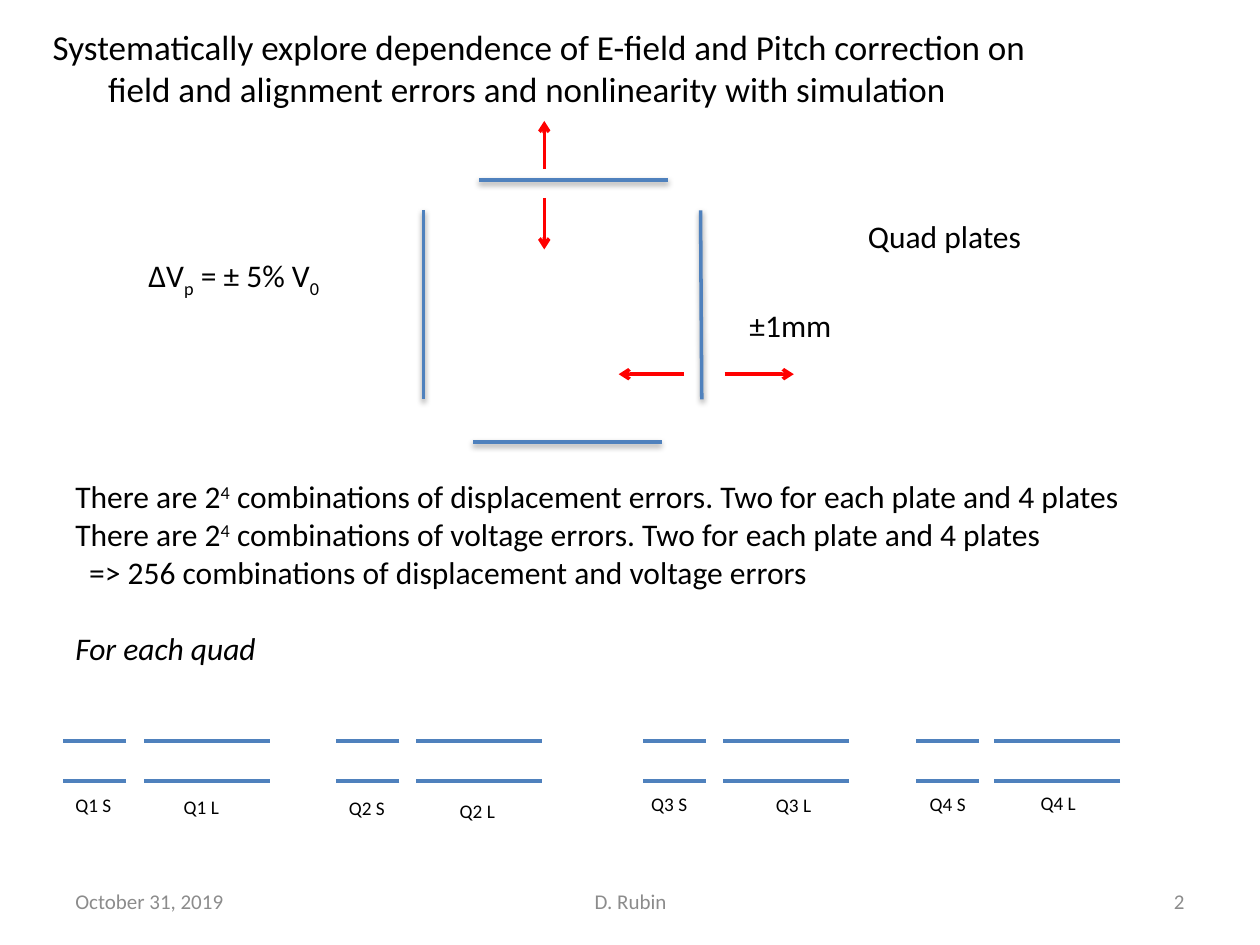
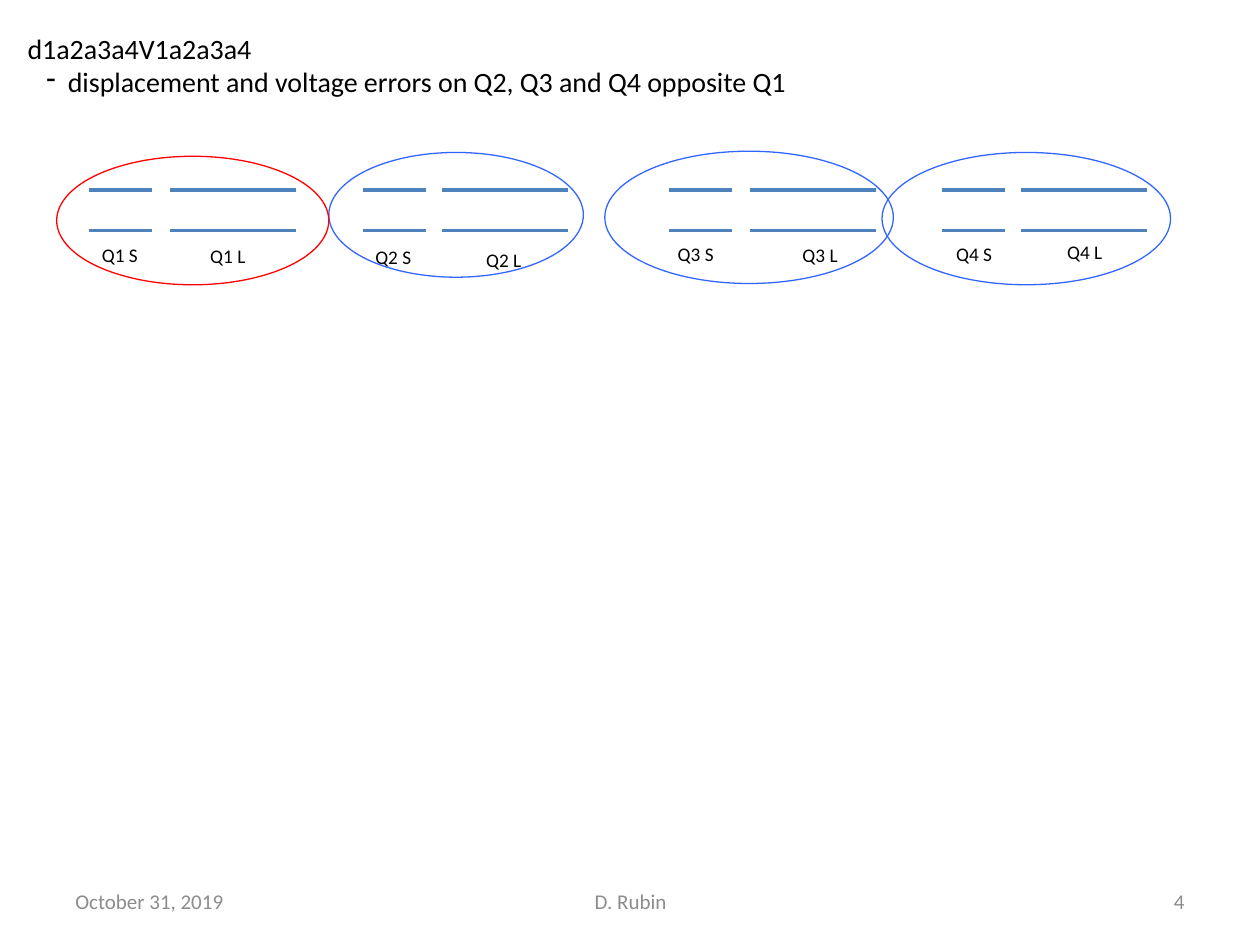
import pptx
import pptx.dml.color
import pptx.enum.shapes
import pptx.enum.text
import pptx.oxml
import pptx.oxml.ns
import pptx.util
from dataclasses import dataclass

Inches = pptx.util.Inches
Align = pptx.enum.text.PP_ALIGN
Anchor = pptx.enum.text.MSO_ANCHOR


@dataclass(frozen=True)
class Theme:
    font: str = "Calibri"
    text: str = "000000"
    footer: str = "8C8C8C"
    plate: str = "4F81BD"
    red: str = "FF0000"
    blue: str = "3366FF"
    title_size: int = 20
    body_size: int = 18
    heading_size: int = 16
    footer_size: int = 12
    label_size: int = 11
    line_width: float = 2
    outline_width: float = 0.75


THEME = Theme()
SUBSCRIPT, SUPERSCRIPT = -25000, 30000
SHORT_LENGTH, LONG_LENGTH = 0.5, 1.0
PLATE_GAP = 0.32

# Name, left of short and long plates, label positions (x, y from upper plate)
QUADS = [
    ("Q1", 0.5, 1.14, (0.5, 0.37), (1.36, 0.38)),
    ("Q2", 2.67, 3.3, (2.67, 0.39), (3.55, 0.41)),
    ("Q3", 5.1, 5.74, (5.07, 0.36), (6.06, 0.37)),
    ("Q4", 7.27, 7.89, (7.28, 0.36), (8.16, 0.35)),
]


def rgb(color):
    return pptx.dml.color.RGBColor.from_string(color)


def drawing_element(xml):
    """Parse a drawing element given without its namespace declaration."""
    name, rest = xml[1:].split(" ", 1)
    return pptx.oxml.parse_xml(f"<{name} {pptx.oxml.ns.nsdecls('a')} {rest}")


def add_text(slide, box, paragraphs, size, color=THEME.text, align=Align.LEFT,
             anchor=Anchor.TOP, wrap=False):
    """Each paragraph is a string or a list of (text, baseline) pieces."""
    shape = slide.shapes.add_textbox(*map(Inches, box))
    text_frame = shape.text_frame
    text_frame.word_wrap = wrap
    text_frame.vertical_anchor = anchor
    for index, content in enumerate(paragraphs):
        paragraph = text_frame.add_paragraph() if index else text_frame.paragraphs[0]
        paragraph.alignment = align
        pieces = [(content, 0)] if isinstance(content, str) else content
        for text, baseline in pieces:
            run = paragraph.add_run()
            run.text = text
            run.font.name = THEME.font
            run.font.size = pptx.util.Pt(size)
            run.font.color.rgb = rgb(color)
            if baseline:
                run.font._element.set("baseline", str(baseline))
    return text_frame.paragraphs


def indent(paragraph, left, first_line=0.0, bullet=None):
    properties = paragraph._p.get_or_add_pPr()
    properties.set("marL", str(Inches(left)))
    properties.set("indent", str(Inches(first_line)))
    if bullet:
        properties.append(drawing_element(f'<a:buChar char="{bullet}"/>'))


def add_line(slide, start, end, color=THEME.plate, arrow=False, shadow=False):
    connector = slide.shapes.add_connector(
        pptx.enum.shapes.MSO_CONNECTOR.STRAIGHT, *map(Inches, (*start, *end)))
    connector.line.color.rgb = rgb(color)
    connector.line.width = pptx.util.Pt(THEME.line_width)
    if arrow:
        connector.line._get_or_add_ln().append(
            drawing_element('<a:tailEnd type="arrow"/>'))
    effects = drawing_element("<a:effectLst />")
    if shadow:
        effects.append(drawing_element(
            '<a:outerShdw blurRad="40000" dist="20000" dir="5400000" rotWithShape="0">'
            '<a:srgbClr val="000000"><a:alpha val="38000"/></a:srgbClr></a:outerShdw>'))
    connector._element.spPr.append(effects)


def add_ring(slide, box, color):
    ring = slide.shapes.add_shape(
        pptx.enum.shapes.MSO_SHAPE.OVAL, *map(Inches, box))
    ring.shadow.inherit = False
    ring.fill.background()
    ring.line.color.rgb = rgb(color)
    ring.line.width = pptx.util.Pt(THEME.outline_width)


def add_quad_row(slide, top, shift=0.0):
    """Short and long plate pairs of the four quads, with their labels."""
    for name, short_left, long_left, short_label, long_label in QUADS:
        for kind, left, length, label in (
                ("S", short_left, SHORT_LENGTH, short_label),
                ("L", long_left, LONG_LENGTH, long_label)):
            for y in (top, top + PLATE_GAP):
                add_line(slide, (left + shift + length, y), (left + shift, y))
            add_text(slide, (label[0] + shift, top + label[1], 0.49, 0.29),
                     [f"{name} {kind}"], THEME.label_size)


def add_footer(slide, number):
    for left, width, text, align in (
            (0.5, 2.33, "October 31, 2019", Align.LEFT),
            (3.42, 3.17, "D. Rubin", Align.CENTER),
            (7.17, 2.33, str(number), Align.RIGHT)):
        add_text(slide, (left, 6.95, width, 0.4), [text], THEME.footer_size,
                 THEME.footer, align, Anchor.MIDDLE, wrap=True)


def add_plate_diagram(slide):
    # Quad plates
    for start, end in (((3.36, 1.67), (3.36, 3.17)), ((5.56, 1.67), (5.57, 3.17)),
                       ((5.3, 1.43), (3.8, 1.43)), ((5.25, 3.51), (3.75, 3.51))):
        add_line(slide, start, end, shadow=True)
    # Displacement directions
    for start, end in (((5.75, 2.97), (6.3, 2.97)), ((5.43, 2.97), (4.91, 2.97)),
                       ((4.32, 1.34), (4.32, 0.96)), ((4.32, 1.57), (4.32, 1.98))):
        add_line(slide, start, end, THEME.red, arrow=True)
    # Annotations
    voltage_error = [("ΔV", 0), ("p", SUBSCRIPT), (" = ± 5% V", 0), ("0", SUBSCRIPT)]
    for box, content in (((6.79, 1.67, 1.44, 0.4), "Quad plates"),
                         ((5.85, 2.38, 0.86, 0.4), "±1mm"),
                         ((1.08, 1.98, 1.59, 0.4), voltage_error)):
        add_text(slide, box, [content], THEME.body_size)


def build_error_slide(slide):
    title = add_text(slide, (0.32, 0.15, 9.18, 1.11), [
        "Systematically explore dependence of E-field and Pitch correction on",
        "field and alignment errors and nonlinearity with simulation",
    ], THEME.title_size, wrap=True)
    indent(title[1], 0.44)
    add_plate_diagram(slide)

    # Count of combinations
    counts = [[("There are 2", 0), ("4", SUPERSCRIPT),
               (f" combinations of {error} errors. Two for each plate and 4 plates", 0)]
              for error in ("displacement", "voltage")]
    body = add_text(slide, (0.5, 3.74, 8.63, 1.62), [
        *counts,
        "=> 256 combinations of displacement and voltage errors",
        "For each quad",
    ], THEME.body_size)
    indent(body[2], 0.11)
    body[3].space_before = pptx.util.Pt(22)
    body[3].runs[0].font.italic = True

    add_quad_row(slide, top=5.88)
    add_footer(slide, 2)


def build_opposite_slide(slide):
    heading = add_text(slide, (0.12, 0.2, 6.32, 0.64), [
        "d1a2a3a4V1a2a3a4",
        "displacement and voltage errors on Q2, Q3 and Q4 opposite Q1",
    ], THEME.heading_size)
    indent(heading[1], 0.32, -0.17, bullet="-")

    add_quad_row(slide, top=1.51, shift=0.21)
    # Q1 stands against the other three quads
    for box, color in (((7, 1.21, 2.29, 1.05), THEME.blue),
                       ((2.61, 1.21, 2.02, 0.99), THEME.blue),
                       ((0.45, 1.24, 2.16, 1.02), THEME.red),
                       ((4.8, 1.2, 2.29, 1.05), THEME.blue)):
        add_ring(slide, box, color)
    add_footer(slide, 4)


def main():
    presentation = pptx.Presentation()
    presentation.slide_width = Inches(10)
    presentation.slide_height = Inches(7.5)
    blank = presentation.slide_layouts[6]
    for build in (build_error_slide, build_opposite_slide):
        build(presentation.slides.add_slide(blank))
    presentation.save("out.pptx")


if __name__ == "__main__":
    main()
